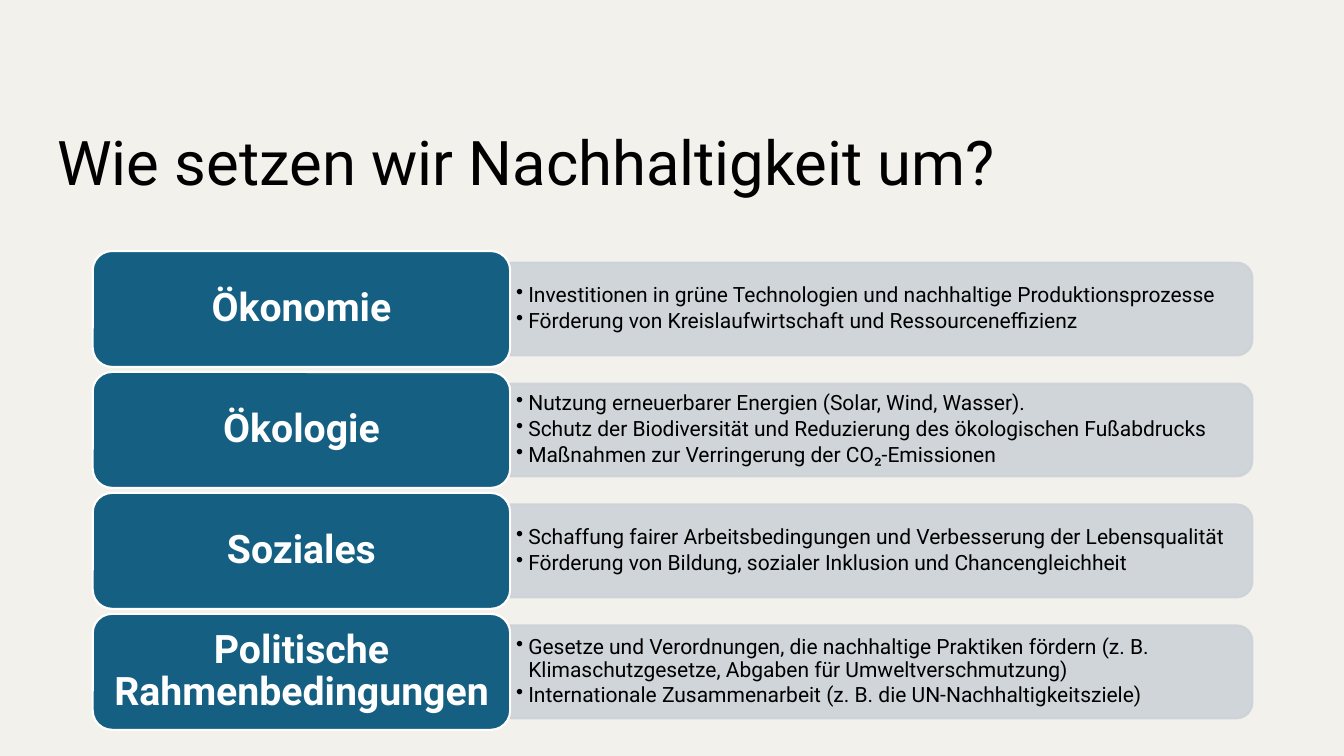
"""Builds the slide on putting sustainability into practice in four fields."""
import pptx
import pptx.dml.color
import pptx.enum.shapes
import pptx.enum.text
import pptx.oxml.ns
import pptx.util
from lxml import etree

Inches = pptx.util.Inches
Pt = pptx.util.Pt
qn = pptx.oxml.ns.qn
shape_types = pptx.enum.shapes.MSO_SHAPE

FIELDS = [
    ("Ökonomie", [
        "Investitionen in grüne Technologien und nachhaltige Produktionsprozesse",
        "Förderung von Kreislaufwirtschaft und Ressourceneffizienz",
    ]),
    ("Ökologie", [
        "Nutzung erneuerbarer Energien (Solar, Wind, Wasser).",
        "Schutz der Biodiversität und Reduzierung des ökologischen Fußabdrucks",
        "Maßnahmen zur Verringerung der CO₂-Emissionen",
    ]),
    ("Soziales", [
        "Schaffung fairer Arbeitsbedingungen und Verbesserung der Lebensqualität",
        "Förderung von Bildung, sozialer Inklusion und Chancengleichheit",
    ]),
    ("Politische Rahmenbedingungen", [
        "Gesetze und Verordnungen, die nachhaltige Praktiken fördern "
        "(z. B. Klimaschutzgesetze, Abgaben für Umweltverschmutzung)",
        "Internationale Zusammenarbeit (z. B. die UN-Nachhaltigkeitsziele)",
    ]),
]
FIRST_TOP, ROW_PITCH = 2.49, 1.2
LABEL_LEFT, LABEL_WIDTH, LABEL_HEIGHT = 0.92, 4.14, 1.15
PANEL_LEFT, PANEL_WIDTH, PANEL_HEIGHT = LABEL_LEFT + LABEL_WIDTH, 7.36, 0.92
BULLETS_WIDTH, BULLETS_HEIGHT = 7.32, 0.83


def color(hex_string):
    return pptx.dml.color.RGBColor.from_string(hex_string)


def write(shape, texts, size, hex_string, margins, bold=False, bulleted=False, centered=False):
    frame = shape.text_frame
    frame.word_wrap = True
    frame.vertical_anchor = pptx.enum.text.MSO_ANCHOR.MIDDLE
    frame.margin_left = frame.margin_right = Inches(margins[0])
    frame.margin_top = frame.margin_bottom = Inches(margins[1])
    for index, text in enumerate(texts):
        paragraph = frame.add_paragraph() if index else frame.paragraphs[0]
        paragraph.line_spacing = 0.9
        if centered:
            paragraph.alignment = pptx.enum.text.PP_ALIGN.CENTER
        if bulleted:
            paragraph.space_after = Pt(2.25)
            properties = paragraph._p.get_or_add_pPr()
            properties.set("marL", str(Inches(0.12)))
            properties.set("indent", str(Inches(-0.12)))
            etree.SubElement(properties, qn("a:buChar")).set("char", "•")
        run = paragraph.add_run()
        run.text = text
        run.font.name = "Roboto"
        run.font.size = Pt(size)
        run.font.bold = bold
        run.font.color.rgb = color(hex_string)


presentation = pptx.Presentation()
presentation.slide_width = Inches(13.33)
presentation.slide_height = Inches(7.5)
slide = presentation.slides.add_slide(presentation.slide_layouts[6])
slide.background.fill.solid()
slide.background.fill.fore_color.rgb = color("F2F1EB")

title = slide.shapes.add_textbox(Inches(0.47), Inches(0.92), Inches(11.5), Inches(1.45))
write(title, ["Wie setzen wir Nachhaltigkeit um?"], 44, "000000", (0.1, 0.05))

for row, (field, measures) in enumerate(FIELDS):
    top = FIRST_TOP + row * ROW_PITCH
    middle = top + LABEL_HEIGHT / 2

    panel = slide.shapes.add_shape(
        shape_types.ROUND_2_SAME_RECTANGLE,
        Inches(PANEL_LEFT + (PANEL_WIDTH - PANEL_HEIGHT) / 2), Inches(middle - PANEL_WIDTH / 2),
        Inches(PANEL_HEIGHT), Inches(PANEL_WIDTH))
    panel.rotation = 90
    panel.shadow.inherit = False
    panel.fill.solid()
    panel.fill.fore_color.rgb = color("CCD2D8")
    panel.line.color.rgb = color("CCD2D8")
    panel.line.width = Pt(1.5)
    for panel_color in panel._element.spPr.iter(qn("a:srgbClr")):
        etree.SubElement(panel_color, qn("a:alpha")).set("val", "90000")

    bullets = slide.shapes.add_textbox(
        Inches(PANEL_LEFT), Inches(middle - BULLETS_HEIGHT / 2),
        Inches(BULLETS_WIDTH), Inches(BULLETS_HEIGHT))
    write(bullets, measures, 15, "000000", (0.06, 0.03), bulleted=True)

    label = slide.shapes.add_shape(
        shape_types.ROUNDED_RECTANGLE, Inches(LABEL_LEFT), Inches(top),
        Inches(LABEL_WIDTH), Inches(LABEL_HEIGHT))
    label.shadow.inherit = False
    label.fill.solid()
    label.fill.fore_color.rgb = color("156082")
    label.line.color.rgb = color("FFFFFF")
    label.line.width = Pt(1.5)
    write(label, [field], 28, "FFFFFF", (0.12, 0.06), bold=True, centered=True)

presentation.save("out.pptx")
